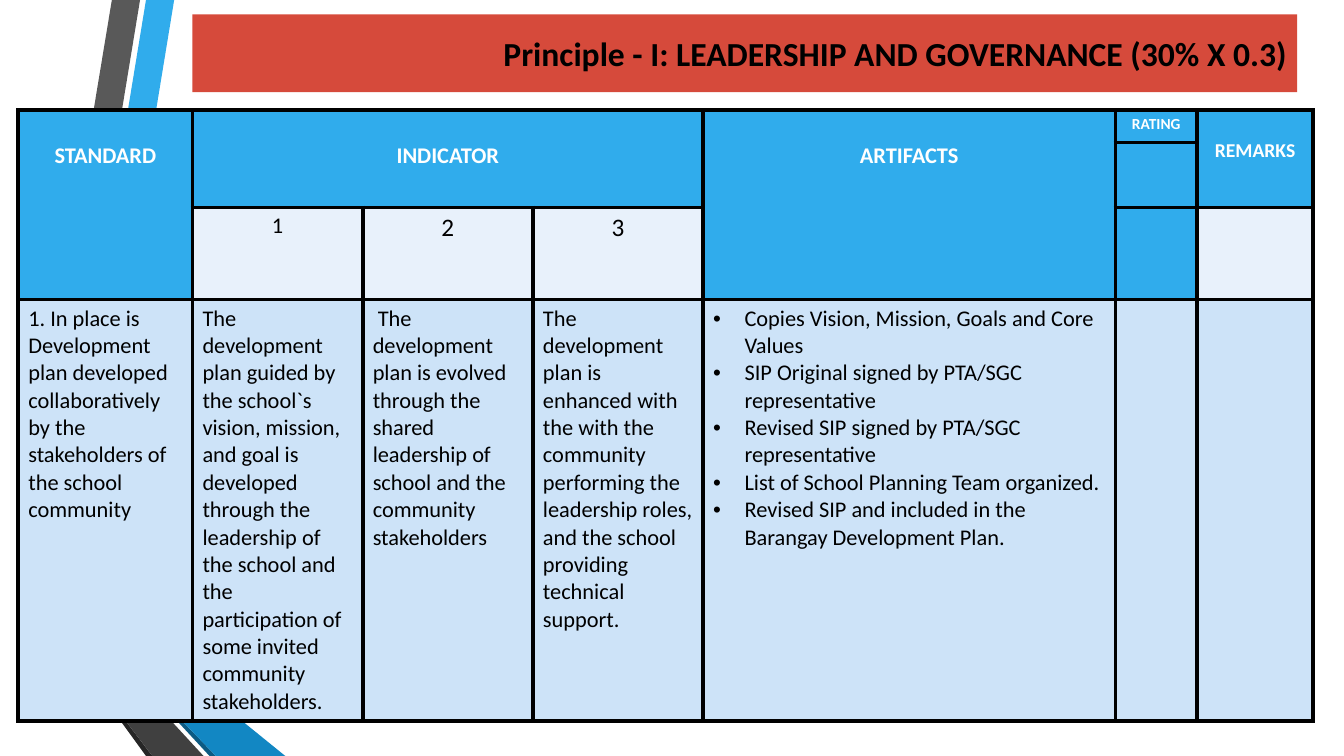
from lxml.etree import SubElement
from pptx import Presentation
from pptx.dml.color import RGBColor
from pptx.enum.text import MSO_ANCHOR, MSO_AUTO_SIZE, PP_ALIGN
from pptx.oxml import parse_xml
from pptx.oxml.ns import nsdecls, qn
from pptx.util import Cm, Pt

COLORS = {
    "sky": "30ACEC", "blue": "1287C3", "navy": "0C5A82",
    "gray": "595959", "charcoal": "404040", "soot": "262626",
    "red": "D64A3B", "pale": "E8F1FB", "light": "CDE3F8",
    "black": "000000", "white": "FFFFFF",
}

RIBBONS = [
    ("sky", [(1.27, 14.68), (1.96, 14.81), (4.39, 0), (3.68, 0)]),
    ("gray", [(3.53, 0), (2.82, 0), (0.41, 14.55), (1.12, 14.66)]),
    ("soot", [(0.41, 14.55), (3.68, 19.05), (3.84, 19.05)]),
    ("navy", [(1.27, 14.71), (5.28, 19.05), (5.44, 19.05)]),
    ("blue", [(1.27, 14.68), (1.27, 14.71), (5.44, 19.05), (7.19, 19.05), (1.96, 14.81)]),
    ("charcoal", [(5.13, 19.05), (1.22, 14.81), (1.09, 14.68), (1.12, 14.66),
                  (0.41, 14.55), (3.84, 19.05)]),
]

COLUMN_WIDTHS = [4.39, 4.29, 4.29, 4.29, 10.39, 2.06, 2.92]
ROW_HEIGHTS = [0.82, 1.64, 2.32, 10.62]
ROW_FILLS = ["sky", "sky", "pale", "light"]
MERGES = [(0, 0, 2, 0), (0, 1, 1, 3), (0, 4, 2, 4), (0, 6, 1, 6)]

HEADINGS = [
    (0, "STANDARD", 16, 2), (1, "INDICATOR", 16, 2), (4, "ARTIFACTS", 16, 2),
    (5, "RATING", 11, 1), (6, "REMARKS", 14, 2),
]
LEVELS = [(1, "1", 16), (2, "2", 18), (3, "3", 18)]
DESCRIPTIONS = [
    "1. In place is Development plan developed collaboratively by the "
    "stakeholders of the school community",
    "The development plan guided by the school`s vision, mission, and goal is developed through "
    "the leadership of the school and the participation of some invited community stakeholders.",
    " The development plan is evolved through the shared leadership of school and the "
    "community stakeholders",
    "The development plan is enhanced with the with the community performing the leadership "
    "roles, and the school providing technical support.",
]
ARTIFACTS = [
    "Copies Vision, Mission, Goals and Core Values",
    "SIP Original signed by PTA/SGC representative",
    "Revised SIP signed by PTA/SGC representative",
    "List of School Planning Team organized.",
    "Revised SIP and included in the Barangay Development Plan.",
]


class SlideBuilder:
    font = "Calibri"
    border_width = Pt(3)

    def __init__(self, slide):
        self.slide = slide

    def fill(self, target, color):
        target.fill.solid()
        target.fill.fore_color.rgb = RGBColor.from_string(COLORS[color])

    def set_text(self, text_frame, text, size, color="black", bold=False,
                 align=PP_ALIGN.LEFT, spacing=1.0):
        text_frame.text = text
        for paragraph in text_frame.paragraphs:
            paragraph.alignment = align
            paragraph.line_spacing = float(spacing)
            for run in paragraph.runs:
                run.font.name = self.font
                run.font.size = Pt(size)
                run.font.bold = bold
                run.font.color.rgb = RGBColor.from_string(COLORS[color])

    def ribbon(self, color, points):
        corners = [(Cm(x), Cm(y)) for x, y in points]
        builder = self.slide.shapes.build_freeform(*corners[0])
        builder.add_line_segments(corners[1:], close=True)
        shape = builder.convert_to_shape()
        shape.shadow.inherit = False
        self.fill(shape, color)
        shape.line.fill.background()

    def title(self, text, left, top, width, height):
        shape = self.slide.shapes.title
        shape.left, shape.top = Cm(left), Cm(top)
        shape.width, shape.height = Cm(width), Cm(height)
        self.fill(shape, "red")
        shape.text_frame.auto_size = MSO_AUTO_SIZE.NONE
        shape.text_frame.vertical_anchor = MSO_ANCHOR.MIDDLE
        self.set_text(shape.text_frame, text, 24, bold=True, align=PP_ALIGN.RIGHT)

    def border(self, cell):
        properties = cell._tc.get_or_add_tcPr()
        for index, side in enumerate(("lnL", "lnR", "lnT", "lnB")):
            properties.insert(index, parse_xml(
                f'<a:{side} {nsdecls("a")} w="{self.border_width}"><a:solidFill>'
                f'<a:srgbClr val="{COLORS["black"]}"/></a:solidFill></a:{side}>'))

    def table(self, left, top):
        frame = self.slide.shapes.add_table(
            len(ROW_HEIGHTS), len(COLUMN_WIDTHS), Cm(left), Cm(top),
            Cm(sum(COLUMN_WIDTHS)), Cm(sum(ROW_HEIGHTS)))
        table = frame.table
        table.first_row = table.horz_banding = False
        for column, width in zip(table.columns, COLUMN_WIDTHS):
            column.width = Cm(width)
        for row, height, color in zip(table.rows, ROW_HEIGHTS, ROW_FILLS):
            row.height = Cm(height)
            for cell in row.cells:
                self.fill(cell, color)
                self.border(cell)
        self.fill(table.cell(2, 5), "sky")
        for first_row, first_column, last_row, last_column in MERGES:
            table.cell(first_row, first_column).merge(table.cell(last_row, last_column))
        return table

    def bullets(self, text_frame, items, size):
        self.set_text(text_frame, "\n".join(items), size)
        for paragraph in text_frame.paragraphs:
            properties = paragraph._p.get_or_add_pPr()
            properties.set("marL", str(Cm(0.79)))
            properties.set("indent", str(-Cm(0.79)))
            SubElement(properties, qn("a:buFont"), typeface="Arial")
            SubElement(properties, qn("a:buChar"), char="•")


def main():
    presentation = Presentation()
    presentation.slide_width, presentation.slide_height = Cm(33.87), Cm(19.05)
    slide = presentation.slides.add_slide(presentation.slide_layouts[5])
    builder = SlideBuilder(slide)

    for color, points in RIBBONS:
        builder.ribbon(color, points)
    builder.title("Principle - I: LEADERSHIP AND GOVERNANCE (30% X 0.3)", 4.85, 0.36, 27.84, 1.96)

    table = builder.table(0.46, 2.77)
    for column, text, size, spacing in HEADINGS:
        builder.set_text(table.cell(0, column).text_frame, text, size, "white", True,
                         PP_ALIGN.CENTER, spacing)
    for column, text, size in LEVELS:
        builder.set_text(table.cell(2, column).text_frame, text, size, align=PP_ALIGN.CENTER)
    for column, text in enumerate(DESCRIPTIONS):
        builder.set_text(table.cell(3, column).text_frame, text, 16)
    builder.bullets(table.cell(3, 4).text_frame, ARTIFACTS, 16)

    presentation.save("out.pptx")


if __name__ == "__main__":
    main()
